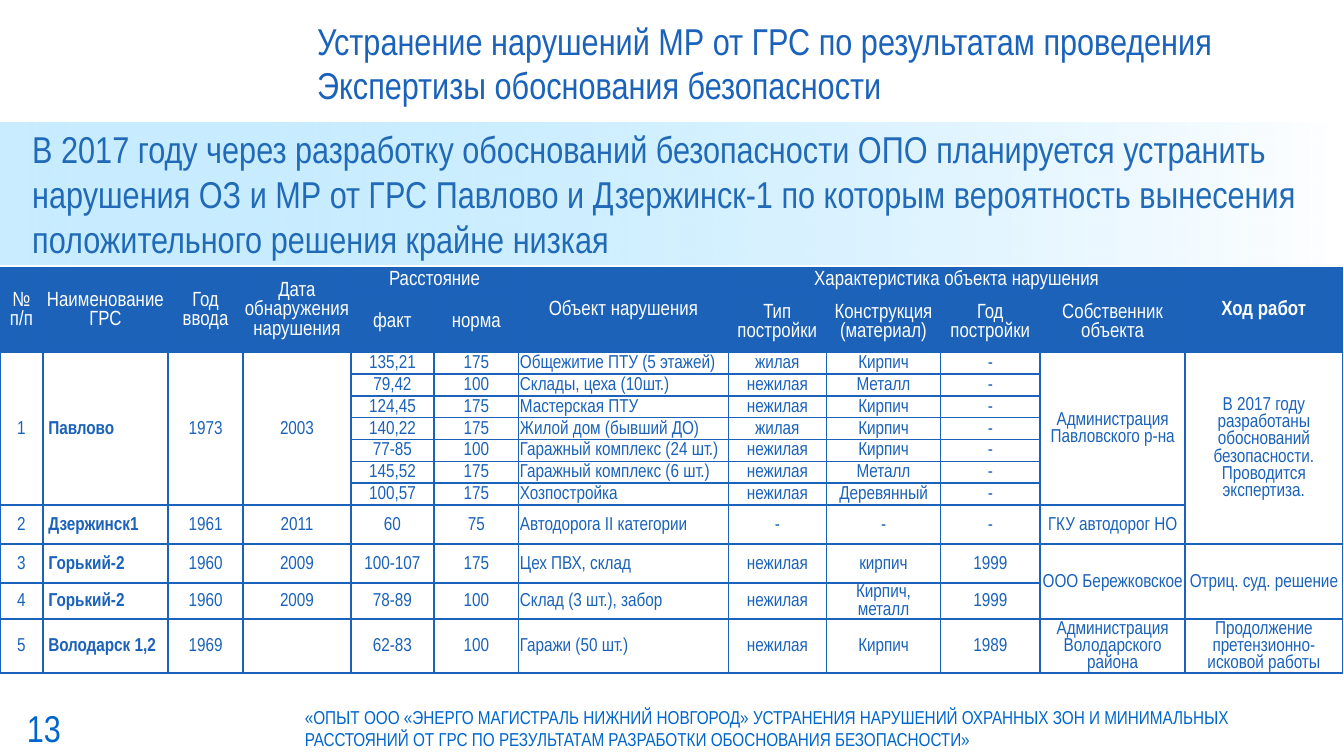
from lxml.etree import SubElement
from pptx import Presentation
from pptx.dml.color import RGBColor
from pptx.enum.shapes import MSO_SHAPE
from pptx.enum.text import MSO_ANCHOR as Anchor, PP_ALIGN as Align
from pptx.oxml.ns import qn
from pptx.util import Inches, Pt

FONT = "Arial Narrow"
BLUE, HEADER_BLUE, FOOTER_BLUE, WHITE = "1A62BA", "1B62B8", "0066CC", "FFFFFF"

COLUMN_WIDTHS = [0.32, 0.93, 0.56, 0.8, 0.62, 0.63, 1.56, 0.73, 0.85, 0.74, 1.08, 1.17]
ROW_HEIGHTS = [0.18, 0.45] + [1.14 / 7] * 7 + [0.29, 0.29, 0.27, 0.4]
HEADER_ROWS = 2
NAME_COLUMN, OBJECT_COLUMN = 1, 6

ROWS = [
    ["№ п/п", "Наименование ГРС", "Год ввода", "Дата обнаружения нарушения", "Расстояние", "",
     "Объект нарушения", "Характеристика объекта нарушения", "", "", "", "Ход работ"],
    ["", "", "", "", "факт", "норма", "", "Тип постройки", "Конструкция (материал)",
     "Год постройки", "Собственник объекта", ""],
    ["1", "Павлово", "1973", "2003", "135,21", "175", "Общежитие ПТУ (5 этажей)", "жилая",
     "Кирпич", "-", "Администрация Павловского р-на",
     "В 2017 году разработаны обоснований безопасности.\nПроводится экспертиза."],
    ["", "", "", "", "79,42", "100", "Склады, цеха (10шт.)", "нежилая", "Металл", "-", "", ""],
    ["", "", "", "", "124,45", "175", "Мастерская ПТУ", "нежилая", "Кирпич", "-", "", ""],
    ["", "", "", "", "140,22", "175", "Жилой дом (бывший ДО)", "жилая", "Кирпич", "-", "", ""],
    ["", "", "", "", "77-85", "100", "Гаражный комплекс (24 шт.)", "нежилая", "Кирпич", "-", "", ""],
    ["", "", "", "", "145,52", "175", "Гаражный комплекс (6 шт.)", "нежилая", "Металл", "-", "", ""],
    ["", "", "", "", "100,57", "175", "Хозпостройка", "нежилая", "Деревянный", "-", "", ""],
    ["2", "Дзержинск1", "1961", "2011", "60", "75", "Автодорога II категории", "-", "-", "-",
     "ГКУ автодорог НО", ""],
    ["3", "Горький-2", "1960", "2009", "100-107", "175", "Цех ПВХ, склад", "нежилая", "кирпич",
     "1999", "ООО Бережковское", "Отриц. суд. решение"],
    ["4", "Горький-2", "1960", "2009", "78-89", "100", "Склад (3 шт.), забор", "нежилая",
     "Кирпич,\vметалл", "1999", "", ""],
    ["5", "Володарск 1,2", "1969", "", "62-83", "100", "Гаражи (50 шт.)", "нежилая", "Кирпич",
     "1989", "Администрация Володарского района", "Продолжение претензионно-исковой работы"],
]

# (first row, first column, last row, last column)
MERGES = (
    [(0, column, 1, column) for column in (0, 1, 2, 3, 6, 11)]
    + [(0, 4, 0, 5), (0, 7, 0, 10)]
    + [(2, column, 8, column) for column in (0, 1, 2, 3, 10)]
    + [(2, 11, 9, 11), (10, 10, 11, 10), (10, 11, 11, 11)]
)


def rgb(value):
    return RGBColor.from_string(value)


def style_text(frame, size, color, align=Align.LEFT, bold=False):
    for para in frame.paragraphs:
        para.alignment = align
        for span in para.runs:
            font = span.font
            font.name, font.size, font.bold = FONT, Pt(size), bold
            font.color.rgb = rgb(color)


def set_margins(target, left, top, right, bottom):
    target.margin_left, target.margin_top = Inches(left), Inches(top)
    target.margin_right, target.margin_bottom = Inches(right), Inches(bottom)


def add_title(slide, text):
    title = slide.shapes.title
    title.left, title.top = Inches(2.26), Inches(0.18)
    title.width, title.height = Inches(7.74), Inches(0.57)
    frame = title.text_frame
    frame.text = text
    frame.vertical_anchor = Anchor.MIDDLE
    style_text(frame, 20, BLUE)


def add_text(slide, area, text, size, margins, anchor):
    box = slide.shapes.add_textbox(*map(Inches, area))
    frame = box.text_frame
    frame.word_wrap = True
    frame.vertical_anchor = anchor
    set_margins(frame, *margins)
    frame.text = text
    style_text(frame, size, FOOTER_BLUE)


def add_banner(slide, text):
    """Add the full-width band that fades from light blue to white."""
    band = slide.shapes.add_shape(
        MSO_SHAPE.RECTANGLE, Inches(0), Inches(0.91), Inches(10), Inches(1.06))
    band.shadow.inherit = False
    band.line.fill.background()
    band.fill.gradient()
    band.fill.gradient_angle = 0
    stops = zip(band.fill.gradient_stops, ("66CCFF", WHITE), (0, 1))
    for stop, color, position in stops:
        stop.color.rgb = rgb(color)
        stop.position = position
    stop_colors = band._element.spPr.find(qn("a:gradFill")).iter(qn("a:srgbClr"))
    for stop_color, opacity in zip(stop_colors, (35, 82)):
        SubElement(stop_color, qn("a:alpha"), val=str(opacity * 1000))
    frame = band.text_frame
    frame.word_wrap = True
    frame.vertical_anchor = Anchor.MIDDLE
    set_margins(frame, 0.24, 0, 0, 0)
    frame.text = text
    style_text(frame, 20, "206AB7")


def add_borders(cell):
    properties = cell._tc.get_or_add_tcPr()
    for side in ("lnL", "lnR", "lnT", "lnB"):
        line = SubElement(properties, qn(f"a:{side}"), w=str(Pt(1)))
        fill = SubElement(line, qn("a:solidFill"))
        SubElement(fill, qn("a:srgbClr"), val=BLUE)


def fill_cell(cell, text, row, column):
    is_header = row < HEADER_ROWS
    is_name = column == NAME_COLUMN and not is_header
    is_left = is_name or (column == OBJECT_COLUMN and not is_header)
    bold = is_name or (is_header and text == "Ход работ")
    set_margins(cell, 0.04 if is_name else 0.01, 0.01, 0.01, 0)
    cell.vertical_anchor = Anchor.MIDDLE
    add_borders(cell)
    if is_header:
        cell.fill.solid()
        cell.fill.fore_color.rgb = rgb(HEADER_BLUE)
    else:
        cell.fill.background()
    cell.text_frame.text = text
    style_text(cell.text_frame, 11 if is_header else 10, WHITE if is_header else BLUE,
               Align.LEFT if is_left else Align.CENTER, bold)


def add_violations_table(slide):
    frame = slide.shapes.add_table(
        len(ROWS), len(COLUMN_WIDTHS), Inches(0), Inches(1.99),
        Inches(sum(COLUMN_WIDTHS)), Inches(sum(ROW_HEIGHTS)))
    table = frame.table
    table.first_row = table.horz_banding = False
    for column, width in zip(table.columns, COLUMN_WIDTHS):
        column.width = Inches(width)
    for row, height in zip(table.rows, ROW_HEIGHTS):
        row.height = Inches(height)
    for row, texts in enumerate(ROWS):
        for column, text in enumerate(texts):
            fill_cell(table.cell(row, column), text, row, column)
    for top, left, bottom, right in MERGES:
        table.cell(top, left).merge(table.cell(bottom, right))


def main():
    deck = Presentation()
    deck.slide_width, deck.slide_height = Inches(10), Inches(10 * 9 / 16)
    slide = deck.slides.add_slide(deck.slide_layouts[5])
    add_violations_table(slide)
    add_banner(slide, "В 2017 году через разработку обоснований безопасности ОПО планируется "
                      "устранить нарушения ОЗ и МР от ГРС Павлово и Дзержинск-1 по которым "
                      "вероятность вынесения положительного решения крайне низкая")
    add_title(slide, "Устранение нарушений МР от ГРС по результатам проведения "
                     "Экспертизы обоснования безопасности")
    add_text(slide, (0.2, 5.22, 1.89, 0.39), "13", 20, (0, 0, 0, 0), Anchor.MIDDLE)
    add_text(slide, (2.17, 5.2, 7.72, 0.44),
             "«ОПЫТ ООО «ЭНЕРГО МАГИСТРАЛЬ НИЖНИЙ НОВГОРОД» УСТРАНЕНИЯ НАРУШЕНИЙ ОХРАННЫХ ЗОН "
             "И МИНИМАЛЬНЫХ РАССТОЯНИЙ ОТ ГРС ПО РЕЗУЛЬТАТАМ РАЗРАБОТКИ ОБОСНОВАНИЯ "
             "БЕЗОПАСНОСТИ»", 10, (0.1, 0.05, 0.1, 0.05), Anchor.TOP)
    deck.save("out.pptx")


if __name__ == "__main__":
    main()
